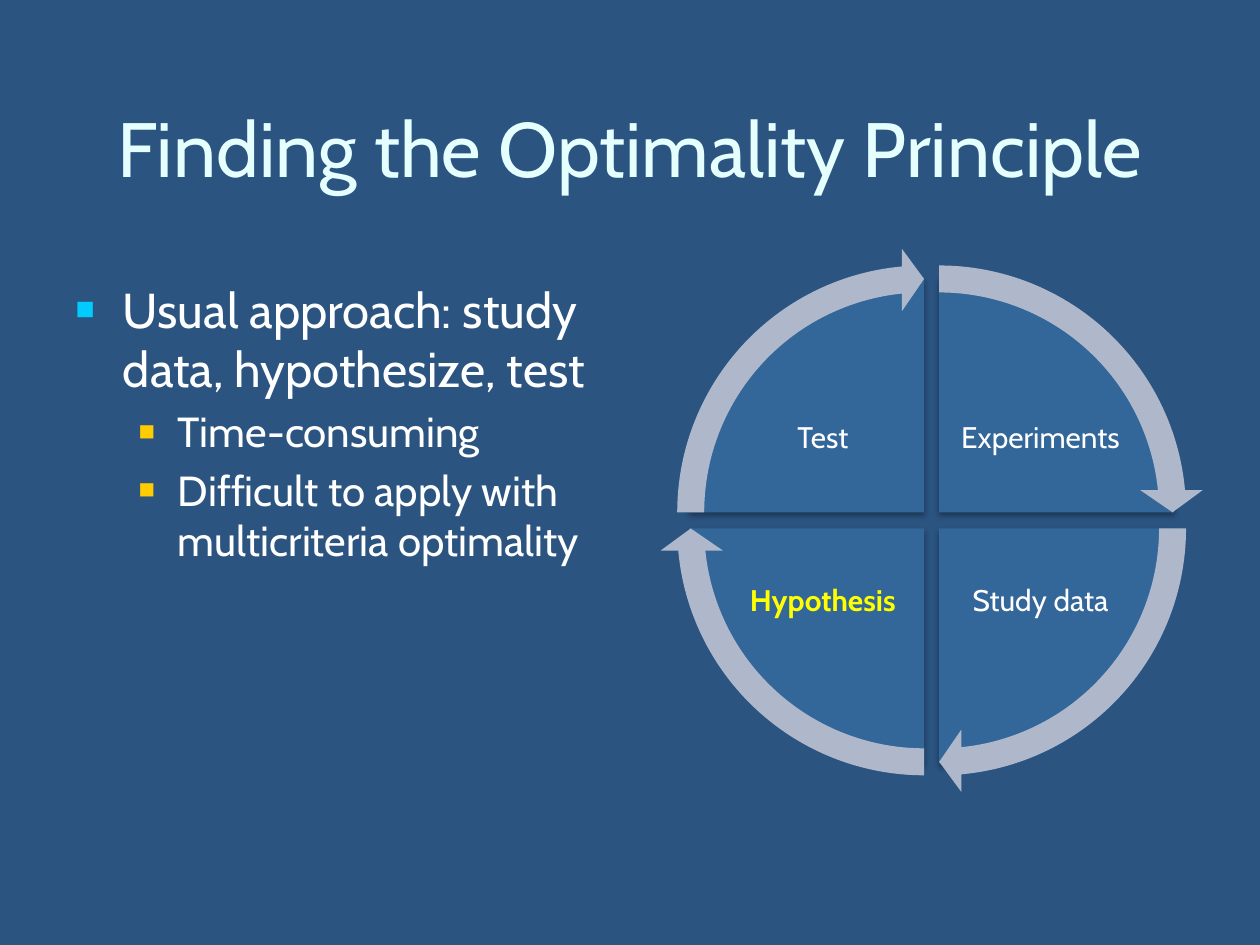
from dataclasses import dataclass

import pptx
import pptx.dml.color
import pptx.enum.shapes
import pptx.enum.text
import pptx.oxml
import pptx.oxml.ns
import pptx.util
from lxml import etree

Pt = pptx.util.Pt
RGBColor = pptx.dml.color.RGBColor
Preset = pptx.enum.shapes.MSO_SHAPE
Align = pptx.enum.text.PP_ALIGN
Anchor = pptx.enum.text.MSO_ANCHOR

BACKGROUND = RGBColor(0x2B, 0x54, 0x81)
TITLE = RGBColor(0xE5, 0xFF, 0xFF)
WHITE = RGBColor(0xFF, 0xFF, 0xFF)
YELLOW = RGBColor(0xFF, 0xFF, 0x00)
CYAN = RGBColor(0x00, 0xCC, 0xFF)
GOLD = RGBColor(0xFF, 0xCC, 0x00)
SEGMENT = RGBColor(0x33, 0x66, 0x99)
ARROW = RGBColor(0xAE, 0xB8, 0xCA)

FONT = "Cabin"
CENTER_X, CENTER_Y = 532.4, 297.4
PIE_SIZE, ARROW_SIZE = 268.6, 302.4
SHIFT_X, SHIFT_Y = 4.3, 4.6
LABEL_WIDTH, LABEL_HEIGHT = 99.4, 73.4
LABEL_GAP_X, LABEL_GAP_Y = 12.5, 9.7
QUARTER = 54
ARROW_SWEEP = 50.725


@dataclass
class Bullet:
    text: str
    level: int
    size: float
    left: float
    hanging: float
    space_before: float
    color: RGBColor


@dataclass
class Segment:
    text: str
    side_x: int
    side_y: int
    start: int
    color: RGBColor = WHITE
    bold: bool = False


BULLETS = [
    Bullet("Usual approach: study data, hypothesize, test", 0, 28, 27, 27, 0, CYAN),
    Bullet("Time-consuming", 1, 24, 58.5, 22.5, 4.8, GOLD),
    Bullet("Difficult to apply with multicriteria optimality", 1, 24, 58.5, 22.5, 4.8, GOLD),
]
SEGMENTS = [
    Segment("Experiments", 1, -1, 3 * QUARTER),
    Segment("Study data", 1, 1, 0),
    Segment("Hypothesis", -1, 1, QUARTER, YELLOW, True),
    Segment("Test", -1, -1, 2 * QUARTER),
]


def set_values(target, values: dict) -> None:
    for name, value in values.items():
        setattr(target, name, value)


def add_run(paragraph, text: str, size: float, color: RGBColor, bold: bool = False) -> None:
    run = paragraph.add_run()
    run.text = text
    set_values(run.font, {"name": FONT, "size": Pt(size), "bold": bold})
    run.font.color.rgb = color


def place(shape, left: float, top: float, width: float, height: float) -> None:
    set_values(shape, {"left": Pt(left), "top": Pt(top), "width": Pt(width), "height": Pt(height)})


def add_child(parent, tag: str, **attributes: str):
    return etree.SubElement(parent, pptx.oxml.ns.qn(tag), attributes)


def add_title(slide) -> None:
    title = slide.shapes.title
    place(title, 36, 30, 648, 108)
    set_values(title.text_frame, {
        "vertical_anchor": Anchor.MIDDLE,
        "auto_size": pptx.enum.text.MSO_AUTO_SIZE.NONE,
    })
    paragraph = title.text_frame.paragraphs[0]
    paragraph.alignment = Align.CENTER
    add_run(paragraph, "Finding the Optimality Principle", 44, TITLE)


def add_bullets(slide, bullets: list[Bullet]) -> None:
    body = slide.placeholders[1]
    place(body, 36, 156, 324, 324)
    frame = body.text_frame
    frame.auto_size = pptx.enum.text.MSO_AUTO_SIZE.NONE
    for index, bullet in enumerate(bullets):
        paragraph = frame.add_paragraph() if index else frame.paragraphs[0]
        set_values(paragraph, {"level": bullet.level, "space_before": Pt(bullet.space_before)})
        properties = paragraph._p.get_or_add_pPr()
        properties.set("marL", str(Pt(bullet.left)))
        properties.set("indent", str(-Pt(bullet.hanging)))
        color = add_child(properties, "a:buClr")
        add_child(color, "a:srgbClr", val=str(bullet.color))
        add_child(properties, "a:buSzPct", val="65000")
        add_child(properties, "a:buFont", typeface="Arial")
        add_child(properties, "a:buChar", char="■")
        add_run(paragraph, bullet.text, bullet.size, WHITE)


def add_round(slide, preset, segment: Segment, size: float, color: RGBColor, adjustments: list[float]):
    left = CENTER_X + segment.side_x * SHIFT_X - size / 2
    top = CENTER_Y + segment.side_y * SHIFT_Y - size / 2
    shape = slide.shapes.add_shape(preset, Pt(left), Pt(top), Pt(size), Pt(size))
    for index, value in enumerate(adjustments):
        shape.adjustments[index] = value
    shape.fill.solid()
    shape.fill.fore_color.rgb = color
    shape.line.fill.background()
    shape.shadow.inherit = False
    return shape


def add_shadow(shape) -> None:
    effects = shape._element.spPr.find(pptx.oxml.ns.qn("a:effectLst"))
    shadow = add_child(effects, "a:outerShdw", blurRad=str(Pt(3.1)), dist=str(Pt(1.8)),
                       dir="5400000", rotWithShape="0")
    color = add_child(shadow, "a:srgbClr", val="000000")
    add_child(color, "a:alpha", val="35000")


def add_label(slide, segment: Segment) -> None:
    left = CENTER_X + segment.side_x * (LABEL_GAP_X + LABEL_WIDTH / 2) - LABEL_WIDTH / 2
    top = CENTER_Y + segment.side_y * (LABEL_GAP_Y + LABEL_HEIGHT / 2) - LABEL_HEIGHT / 2
    label = slide.shapes.add_textbox(Pt(left), Pt(top), Pt(LABEL_WIDTH), Pt(LABEL_HEIGHT))
    margins = dict.fromkeys(["margin_left", "margin_top", "margin_right", "margin_bottom"], Pt(1.5))
    set_values(label.text_frame, {"word_wrap": True, "vertical_anchor": Anchor.MIDDLE, **margins})
    paragraph = label.text_frame.paragraphs[0]
    set_values(paragraph, {"alignment": Align.CENTER, "line_spacing": 0.9})
    add_run(paragraph, segment.text, 17, segment.color, segment.bold)


def add_cycle(slide, segments: list[Segment]) -> None:
    for segment in segments:
        end = (segment.start + QUARTER) % (4 * QUARTER)
        pie = add_round(slide, Preset.PIE, segment, PIE_SIZE, SEGMENT, [segment.start, end])
        add_shadow(pie)
        add_label(slide, segment)
    for segment in segments:
        adjustments = [0.051, 3.275, segment.start + ARROW_SWEEP, segment.start, 0.059]
        add_round(slide, Preset.CIRCULAR_ARROW, segment, ARROW_SIZE, ARROW, adjustments)


def main() -> None:
    presentation = pptx.Presentation()
    set_values(presentation, {"slide_width": Pt(720), "slide_height": Pt(540)})
    slide = presentation.slides.add_slide(presentation.slide_layouts[1])
    slide.background.fill.solid()
    slide.background.fill.fore_color.rgb = BACKGROUND
    add_title(slide)
    add_bullets(slide, BULLETS)
    add_cycle(slide, SEGMENTS)
    presentation.save("out.pptx")


if __name__ == "__main__":
    main()
